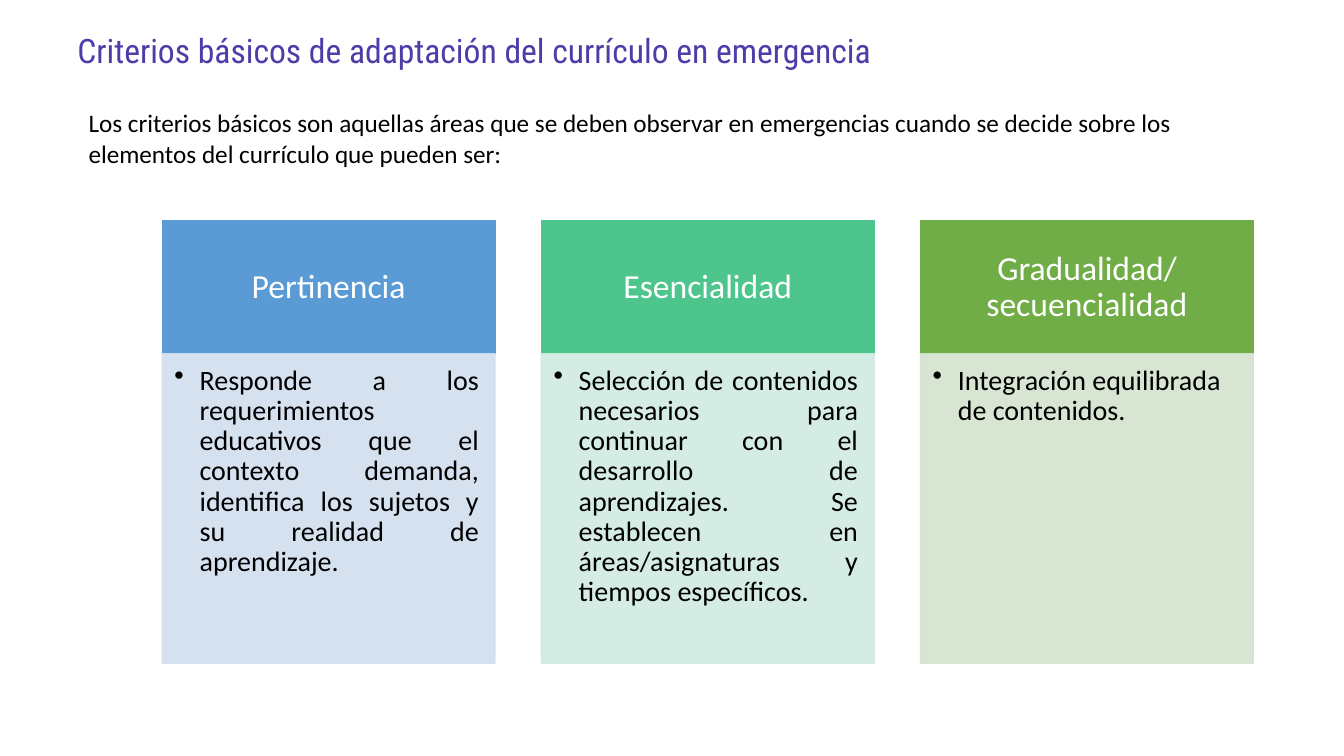
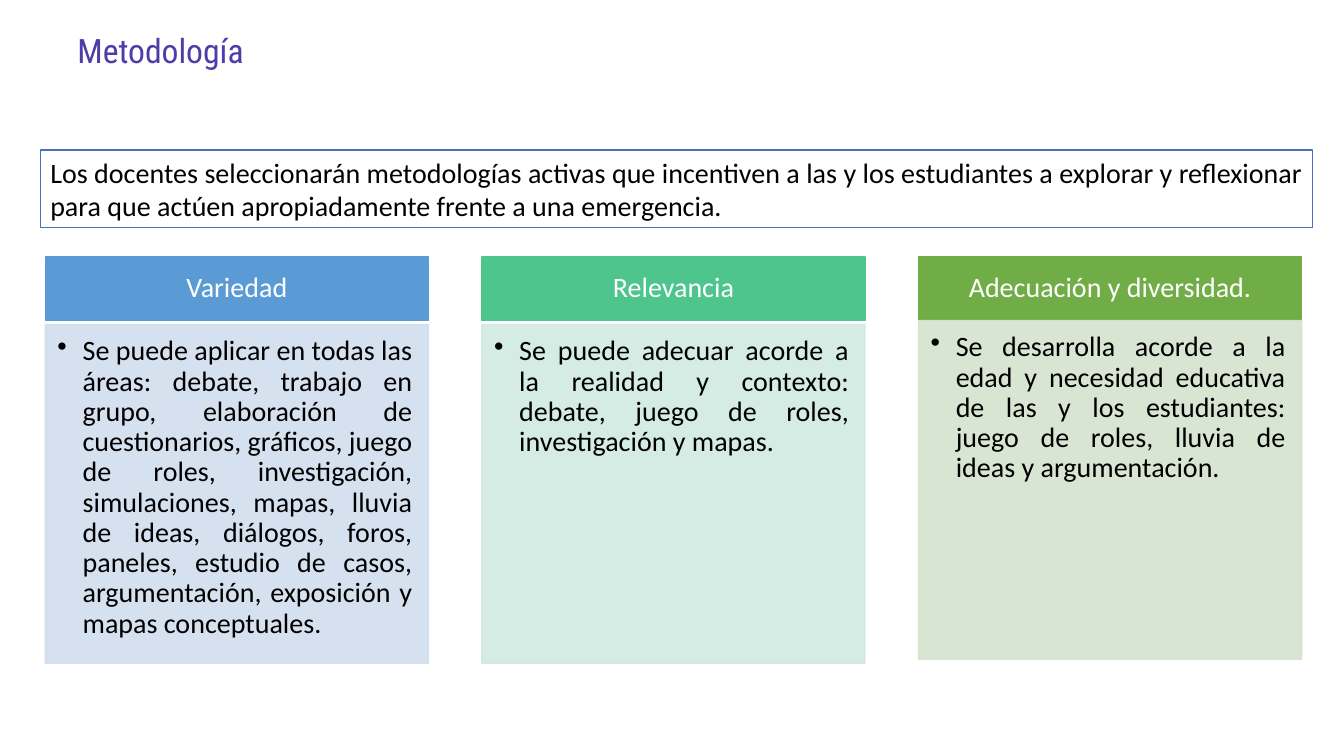
from pptx import Presentation
from pptx import util as u
from pptx.dml.color import RGBColor
from pptx.enum import shapes, text
from pptx.oxml.ns import qn
from lxml import etree

THEME = {
    "title": "4C3DA8", "ink": "000000", "paper": "FFFFFF", "frame": "4472C4",
    # header and body colour of each column
    "columns": [("5B9BD5", "D2DEEF"), ("4DC58D", "D0EAE1"), ("70AD47", "D5E3CF")],
    "title_font": "Roboto Condensed", "body_font": "Calibri",
    "title_size": 24, "body_size": 20, "body_alpha": 90,
}
SLIDE_SIZE = (13.33, 7.5)
TITLE_BOX = (0.67, 0.25, 11.53, 0.5)
PLAIN_INSETS = (0.1, 0.05, 0.1, 0.05)
BODY_INSETS = (0.12, 0.12, 0.16, 0.17)
BULLET_INDENT = 0.25
LEFT, CENTER, JUSTIFY = (text.PP_ALIGN.LEFT, text.PP_ALIGN.CENTER,
                         text.PP_ALIGN.JUSTIFY)

# Content: each column is (heading, bullet, alignment, gap under its header)
SLIDES = [
    {
        "title": "Criterios básicos de adaptación del currículo en emergencia",
        "intro": "Los criterios básicos son aquellas áreas que se deben observar "
                 "en emergencias cuando se decide sobre los elementos del "
                 "currículo que pueden ser:",
        "intro_box": (0.78, 1.02, 11.8, 0.71),
        "intro_style": {"size": 18, "align": LEFT},
        "grid": {"left": 1.61, "top": 2.19, "width": 3.3, "gap": 0.46,
                 "header": 1.32, "body": 3.07},
        "heading_size": 24, "heading_insets": (0.19, 0.11, 0.19, 0.11),
        "columns": [
            ("Pertinencia",
             "Responde a los requerimientos educativos que el contexto demanda, "
             "identifica los sujetos y su realidad de aprendizaje.", JUSTIFY, 0),
            ("Esencialidad",
             "Selección de contenidos necesarios para continuar con el desarrollo "
             "de aprendizajes. Se establecen en áreas/asignaturas y tiempos "
             "específicos.", JUSTIFY, 0),
            ("Gradualidad/secuencialidad",
             "Integración equilibrada de contenidos.", LEFT, 0),
        ],
    },
    {
        "title": "Metodología",
        "intro": "Los docentes seleccionarán metodologías activas que incentiven a "
                 "las y los estudiantes a explorar y reflexionar para que actúen "
                 "apropiadamente frente a una emergencia.",
        "intro_box": (0.4, 1.49, 12.62, 0.77),
        "intro_style": {"size": 20, "align": JUSTIFY, "fill": THEME["paper"],
                        "line": THEME["frame"]},
        "grid": {"left": 0.45, "top": 2.55, "width": 3.8, "gap": 0.53,
                 "header": 0.63, "body": 3.36},
        "heading_size": 20, "heading_insets": (0.16, 0.09, 0.16, 0.09),
        "columns": [
            ("Variedad",
             "Se puede aplicar en todas las áreas: debate, trabajo en grupo, "
             "elaboración de cuestionarios, gráficos, juego de roles, "
             "investigación, simulaciones, mapas, lluvia de ideas, diálogos, "
             "foros, paneles, estudio de casos, argumentación, exposición y mapas "
             "conceptuales.", JUSTIFY, 0.04),
            ("Relevancia",
             "Se puede adecuar acorde a la realidad y contexto: debate, juego de "
             "roles, investigación y mapas.", JUSTIFY, 0.04),
            ("Adecuación y diversidad.",
             "Se desarrolla acorde a la edad y necesidad educativa de las y los "
             "estudiantes: juego de roles, lluvia de ideas y argumentación.",
             JUSTIFY, 0),
        ],
    },
]


def write(box, words, size, color=THEME["ink"], font=THEME["body_font"],
          align=LEFT, anchor=text.MSO_ANCHOR.TOP, insets=PLAIN_INSETS, spacing=1.0):
    """Fill a box with one formatted paragraph and return the paragraph."""
    frame = box.text_frame
    frame_format = {"word_wrap": True, "vertical_anchor": anchor}
    for side, inset in zip(("left", "top", "right", "bottom"), insets):
        frame_format["margin_" + side] = u.Inches(inset)
    for name, value in frame_format.items():
        setattr(frame, name, value)
    paragraph = frame.paragraphs[0]
    for name, value in {"alignment": align, "line_spacing": spacing}.items():
        setattr(paragraph, name, value)
    run = paragraph.add_run()
    run.text = words
    for name, value in {"name": font, "size": u.Pt(size)}.items():
        setattr(run.font, name, value)
    run.font.color.rgb = RGBColor.from_string(color)
    return paragraph


def add_panel(slide, box, fill, line, alpha=100):
    """Draw a flat rectangle, with its opacity given in percent."""
    panel = slide.shapes.add_shape(shapes.MSO_SHAPE.RECTANGLE, *map(u.Inches, box))
    panel.shadow.inherit = False
    panel.fill.solid()
    panel.fill.fore_color.rgb = RGBColor.from_string(fill)
    panel.line.color.rgb = RGBColor.from_string(line)
    panel.line.width = u.Pt(1)
    if alpha < 100:
        for color in panel._element.spPr.iter(qn("a:srgbClr")):
            etree.SubElement(color, qn("a:alpha")).set("val", str(alpha * 1000))
    return panel


def add_bullet(paragraph):
    props = paragraph._p.get_or_add_pPr()
    indent = u.Inches(BULLET_INDENT)
    props.set("marL", str(indent))
    props.set("indent", str(-indent))
    etree.SubElement(props, qn("a:buChar")).set("char", "•")


def add_column(slide, content, index, column):
    grid = content["grid"]
    heading, bullet, align, gap = column
    strong, pale = THEME["columns"][index]
    left = grid["left"] + index * (grid["width"] + grid["gap"])
    body_top = grid["top"] + grid["header"] + gap

    header = add_panel(slide, (left, grid["top"], grid["width"], grid["header"]),
                       strong, strong)
    write(header, heading, content["heading_size"], THEME["paper"], align=CENTER,
          anchor=text.MSO_ANCHOR.MIDDLE, insets=content["heading_insets"],
          spacing=0.9)

    body = add_panel(slide, (left, body_top, grid["width"], grid["body"]),
                     pale, pale, THEME["body_alpha"])
    add_bullet(write(body, bullet, THEME["body_size"], align=align,
                     insets=BODY_INSETS, spacing=0.9))


def add_slide(deck, content):
    slide = deck.slides.add_slide(deck.slide_layouts[6])

    # Title
    title = slide.shapes.add_textbox(*map(u.Inches, TITLE_BOX))
    write(title, content["title"], THEME["title_size"], THEME["title"],
          THEME["title_font"])

    # Introduction, framed where the slide asks for it
    style = content["intro_style"]
    if "fill" in style:
        intro = add_panel(slide, content["intro_box"], style["fill"], style["line"])
    else:
        intro = slide.shapes.add_textbox(*map(u.Inches, content["intro_box"]))
    write(intro, content["intro"], style["size"], align=style["align"])

    # Columns
    for index, column in enumerate(content["columns"]):
        add_column(slide, content, index, column)


def main():
    deck = Presentation()
    deck.slide_width, deck.slide_height = map(u.Inches, SLIDE_SIZE)
    for content in SLIDES:
        add_slide(deck, content)
    deck.save("out.pptx")


if __name__ == "__main__":
    main()
